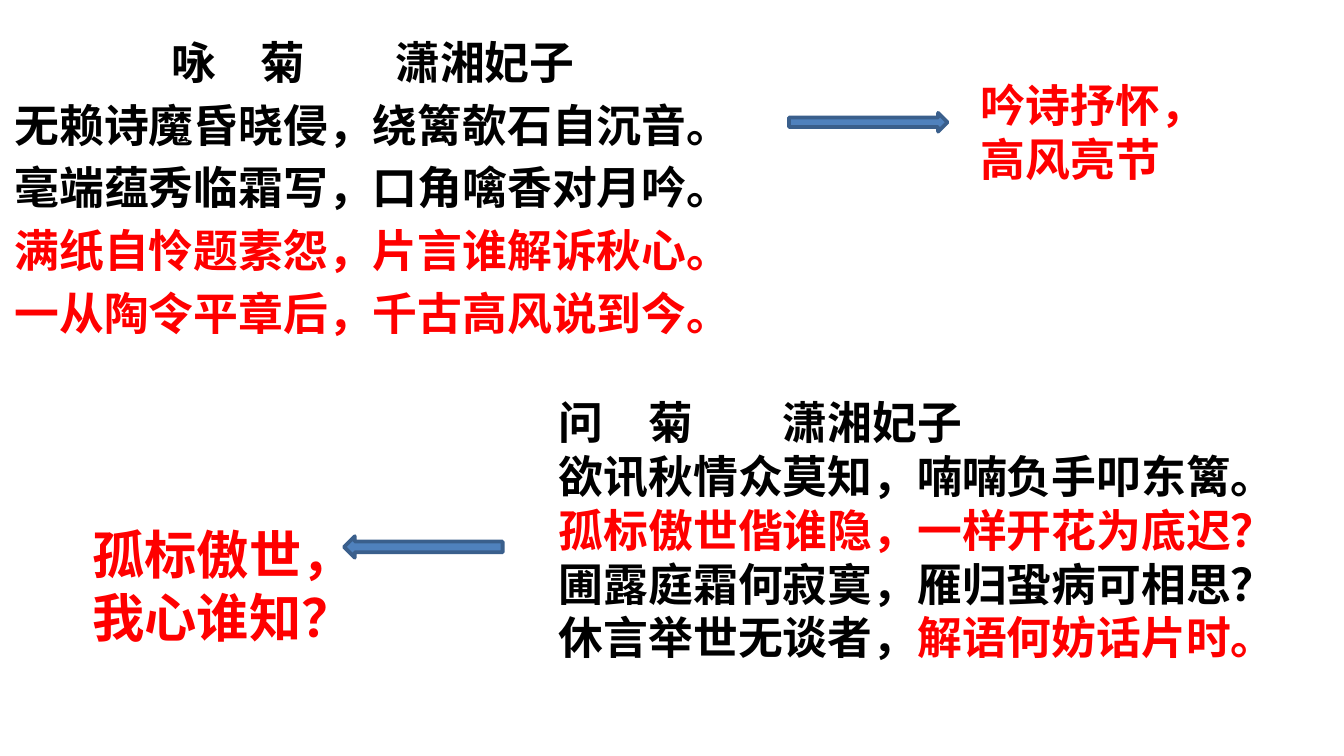
"""Build a slide that sets two chrysanthemum poems beside their themes."""
from dataclasses import dataclass

from pptx import Presentation
from pptx.dml.color import RGBColor
from pptx.enum.shapes import MSO_SHAPE
from pptx.enum.text import MSO_AUTO_SIZE, PP_ALIGN
from pptx.slide import Slide
from pptx.util import Inches, Pt

RIGHT_ARROW = MSO_SHAPE.RIGHT_ARROW
LEFT_ARROW = MSO_SHAPE.LEFT_ARROW
LEFT = PP_ALIGN.LEFT
CENTER = PP_ALIGN.CENTER
NO_AUTOFIT = MSO_AUTO_SIZE.NONE
FONT = "Calibri"
BLANK_LAYOUT = 6
SLIDE_WIDTH = Inches(10)
SLIDE_HEIGHT = SLIDE_WIDTH * 9 // 16
COLORS = {
    "verse": "000000",
    "emphasis": "FF0000",
    "arrow": "4F81BD",
    "arrow_edge": "3A5F8C",
}


@dataclass(frozen=True)
class Box:
    left: float
    top: float
    width: float
    height: float

    def emu(self) -> tuple[int, int, int, int]:
        """Return the box as slide lengths."""
        return Inches(self.left), Inches(self.top), Inches(self.width), Inches(self.height)


@dataclass(frozen=True)
class Phrase:
    text: str
    color: str = "verse"


@dataclass(frozen=True)
class Passage:
    box: Box
    lines: list[list[Phrase]]
    size: int = 24
    align: PP_ALIGN = LEFT
    space_before: float = 0


@dataclass(frozen=True)
class Arrow:
    box: Box
    direction: MSO_SHAPE


PASSAGES = [
    Passage(
        Box(0, 0.21, 5.55, 3.23),
        [
            [Phrase("咏　菊　　潇湘妃子")],
            [Phrase("无赖诗魔昏晓侵，绕篱欹石自沉音。")],
            [Phrase("毫端蕴秀临霜写，口角噙香对月吟。")],
            [Phrase("满纸自怜题素怨，片言谁解诉秋心。", "emphasis")],
            [Phrase("一从陶令平章后，千古高风说到今。", "emphasis")],
        ],
        align=CENTER,
        space_before=4.8,
    ),
    Passage(
        Box(4.06, 2.89, 5.59, 2.12),
        [
            [Phrase("问　菊　　潇湘妃子")],
            [Phrase("欲讯秋情众莫知，喃喃负手叩东篱。")],
            [Phrase("孤标傲世偕谁隐，一样开花为底迟？", "emphasis")],
            [Phrase("圃露庭霜何寂寞，雁归蛩病可相思？")],
            [Phrase("休言举世无谈者，"), Phrase("解语何妨话片时。", "emphasis")],
        ],
    ),
    Passage(Box(0.59, 3.84, 2.05, 1.04), [[Phrase("孤标傲世，我心谁知？", "emphasis")]], size=28),
    Passage(Box(7.2, 0.53, 1.69, 0.91), [[Phrase("吟诗抒怀，高风亮节", "emphasis")]]),
]
ARROWS = [
    Arrow(Box(5.87, 0.84, 1.18, 0.14), RIGHT_ARROW),
    Arrow(Box(2.56, 3.99, 1.18, 0.16), LEFT_ARROW),
]


def rgb(name: str) -> RGBColor:
    """Look up a named colour."""
    return RGBColor.from_string(COLORS[name])


def add_passage(slide: Slide, passage: Passage) -> None:
    """Write a poem or a theme in a text box."""
    frame = slide.shapes.add_textbox(*passage.box.emu()).text_frame
    frame.word_wrap = True
    frame.auto_size = NO_AUTOFIT
    for index, line in enumerate(passage.lines):
        paragraph = frame.add_paragraph() if index else frame.paragraphs[0]
        paragraph.alignment = passage.align
        paragraph.space_before = Pt(passage.space_before)
        for phrase in line:
            run = paragraph.add_run()
            run.text = phrase.text
            run.font.name = FONT
            run.font.size = Pt(passage.size)
            run.font.bold = True
            run.font.color.rgb = rgb(phrase.color)


def add_arrow(slide: Slide, arrow: Arrow) -> None:
    """Draw a block arrow from a poem to its theme."""
    pointer = slide.shapes.add_shape(arrow.direction, *arrow.box.emu())
    pointer.shadow.inherit = False
    pointer.fill.solid()
    pointer.fill.fore_color.rgb = rgb("arrow")
    pointer.line.color.rgb = rgb("arrow_edge")
    pointer.line.width = Pt(2)


def main() -> None:
    """Assemble and save the slide."""
    deck = Presentation()
    deck.slide_width = SLIDE_WIDTH
    deck.slide_height = SLIDE_HEIGHT
    slide = deck.slides.add_slide(deck.slide_layouts[BLANK_LAYOUT])
    for passage in PASSAGES:
        add_passage(slide, passage)
    for arrow in ARROWS:
        add_arrow(slide, arrow)
    deck.save("out.pptx")


if __name__ == "__main__":
    main()
